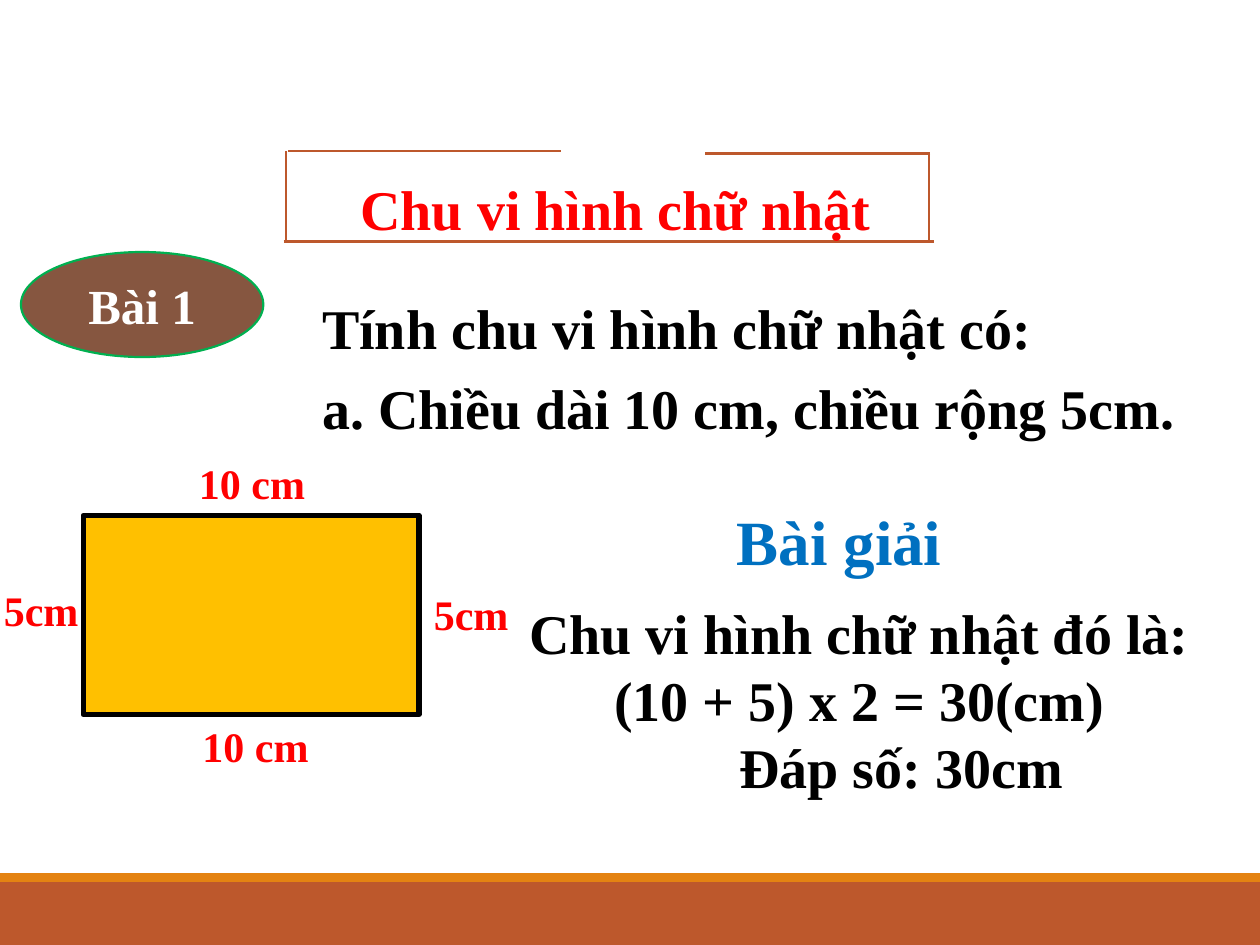
"""Build a maths slide on the perimeter of a rectangle."""
import pptx
import pptx.util
import pptx.dml.color
import pptx.enum.shapes
import pptx.enum.text
from lxml import etree

Pt = pptx.util.Pt
SHAPE = pptx.enum.shapes.MSO_SHAPE
ALIGN = pptx.enum.text.PP_ALIGN

THEME = {
    "font": "Times New Roman",
    "rust": "BD582C", "orange": "E48312", "brown": "865640", "green": "00B050",
    "gold": "FFC000", "red": "FF0000", "blue": "0070C0", "black": "000000", "white": "FFFFFF",
    "label": 24, "badge": 28, "body": 32, "heading": 36,
    "thin": 1.25, "thick": 3,
}

FOOTER = [
    (SHAPE.RECTANGLE, (0, 504, 720, 36), "rust", None, None),
    (SHAPE.RECTANGLE, (0, 499, 720, 5), "orange", None, None),
]
BADGE = (SHAPE.OVAL, (12, 144, 138.5, 60), "brown", "green", "thin")
BADGE_TEXT = "Bài 1"
RECTANGLE = (SHAPE.RECTANGLE, (47.5, 294.5, 192, 113.75), "gold", "black", "thick")

TITLE_FRAME = [
    (162, 138, 533.5, 138),
    (163.5, 138, 163.5, 86.5),
    (530.75, 138, 530.75, 87.5),
    (531.5, 87.75, 403, 87.75),
    (320.5, 86.25, 164.5, 86.25),
]

# text lines, box, size, colour, alignment, wrap
TEXTS = [
    (["Chu vi hình chữ nhật"], (131.75, 96, 440, 46), "body", "red", ALIGN.CENTER, True),
    (["Tính chu vi hình chữ nhật có:"], (177, 164, 428.5, 46), "body", "black", ALIGN.LEFT, True),
    (["a. Chiều dài 10 cm, chiều rộng 5cm."], (177, 210, 506, 46), "body", "black", ALIGN.LEFT, False),
    (["10 cm"], (88, 258, 112, 36.5), "label", "red", ALIGN.CENTER, True),
    (["10 cm"], (90, 408.25, 112, 36.5), "label", "red", ALIGN.CENTER, True),
    (["5cm"], (-11.5, 330.5, 70, 36.5), "label", "red", ALIGN.CENTER, True),
    (["5cm"], (218.25, 332.75, 102, 36.5), "label", "red", ALIGN.CENTER, True),
    (["Bài giải"], (414, 283.75, 132.5, 51), "heading", "blue", ALIGN.LEFT, False),
    (["Chu vi hình chữ nhật đó là:", "(10 + 5) x 2 = 30(cm)", "Đáp số: 30cm"],
     (293.75, 338.5, 394.5, 124), "body", "black", ALIGN.CENTER, False),
]
ANSWER_INDENT = {"Đáp số: 30cm": 48}


def rgb(name):
    return pptx.dml.color.RGBColor.from_string(THEME[name])


def add_run(p, text, size, colour):
    r = p.add_run()
    r.text = text
    r.font.name = THEME["font"]
    r.font.size = Pt(THEME[size])
    r.font.bold = True
    r.font.color.rgb = rgb(colour)


def add_shape(s, kind, box, fill, line, width):
    sp = s.shapes.add_shape(kind, *map(Pt, box))
    sp.shadow.inherit = False
    sp.fill.solid()
    sp.fill.fore_color.rgb = rgb(fill)
    if line:
        sp.line.color.rgb = rgb(line)
        sp.line.width = Pt(THEME[width])
    else:
        sp.line.fill.background()
    return sp


def add_line(s, ends):
    line = s.shapes.add_connector(pptx.enum.shapes.MSO_CONNECTOR.STRAIGHT, *map(Pt, ends))
    line.line.color.rgb = rgb("rust")
    line.line.width = Pt(THEME["thin"])
    etree.SubElement(line._element.spPr, pptx.oxml.ns.qn("a:effectLst"))


def add_text(s, lines, box, size, colour, align, wrap):
    tf = s.shapes.add_textbox(*map(Pt, box)).text_frame
    tf.word_wrap = wrap
    for i, text in enumerate(lines):
        p = tf.add_paragraph() if i else tf.paragraphs[0]
        p.alignment = align
        if text in ANSWER_INDENT:
            p._p.get_or_add_pPr().set("marL", str(Pt(ANSWER_INDENT[text])))
        add_run(p, text, size, colour)


def main():
    prs = pptx.Presentation()
    prs.slide_width, prs.slide_height = Pt(720), Pt(540)
    s = prs.slides.add_slide(prs.slide_layouts[6])
    for bar in FOOTER:
        add_shape(s, *bar)
    for ends in TITLE_FRAME:
        add_line(s, ends)
    tf = add_shape(s, *BADGE).text_frame
    tf.vertical_anchor = pptx.enum.text.MSO_ANCHOR.MIDDLE
    p = tf.paragraphs[0]
    p.alignment = ALIGN.CENTER
    add_run(p, BADGE_TEXT, "badge", "white")
    add_shape(s, *RECTANGLE)
    for text in TEXTS:
        add_text(s, *text)
    prs.save("out.pptx")


if __name__ == "__main__":
    main()
